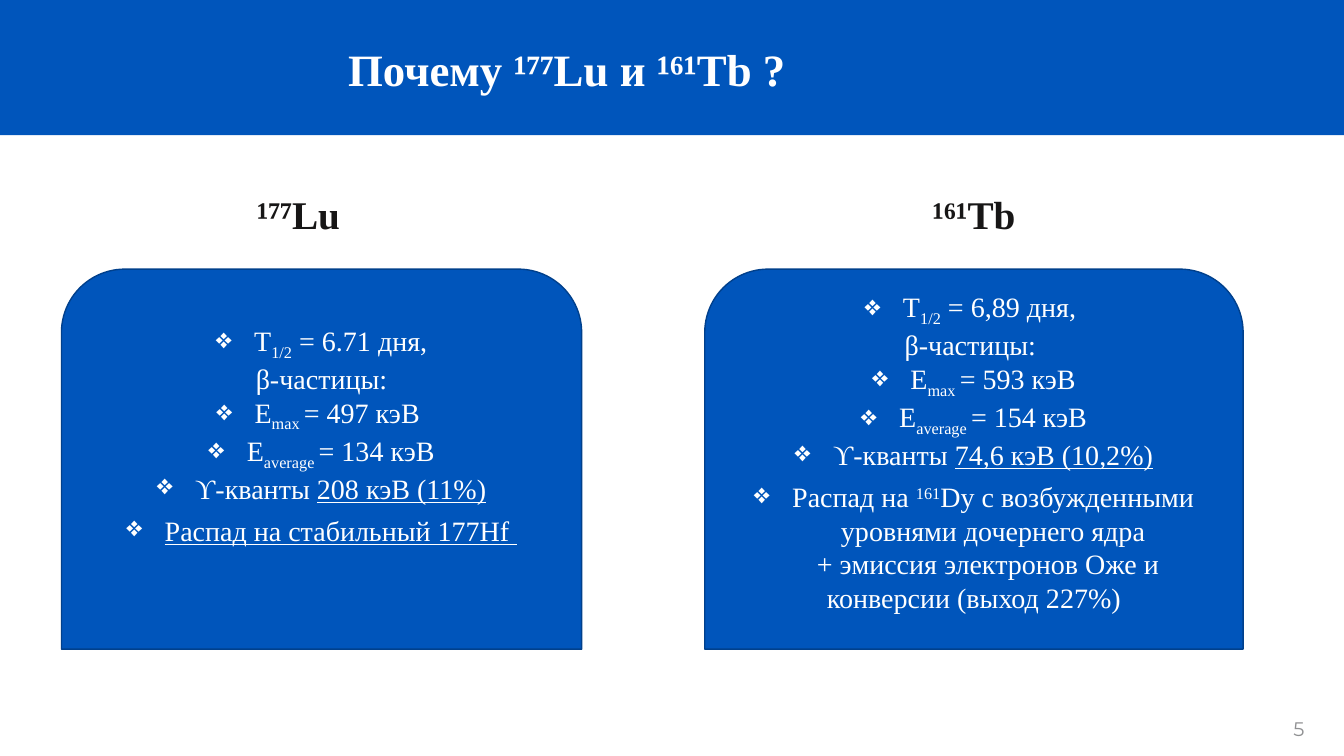
import pptx
import pptx.dml.color
import pptx.enum.shapes
import pptx.enum.text
import pptx.oxml
import pptx.oxml.ns
import pptx.util
from pptx.util import Inches

COLORS = {"blue": "0055BB", "edge": "00408C", "white": "FFFFFF", "ink": "171616", "gray": "8F9092"}
SERIF = "Times New Roman"
BASELINES = {"sub": "-25000", "sup": "30000"}
BULLET_INDENT = 0.38
BLANK_LINE = 0.33

LUTETIUM = [
    ("bullet", [("T", ""), ("1/2", "sub"), (" = 6.71 дня,", "")]),
    ("plain", [("β-частицы:", "")]),
    ("bullet", [("E", ""), ("maх ", "sub"), ("= 497 кэВ ", "")]),
    ("bullet", [("E", ""), ("average ", "sub"), ("= 134 кэВ", "")]),
    ("spaced", [("ϒ-кванты ", ""), ("208 кэВ (11%)", "line")]),
    ("bullet", [("Распад на стабильный 177Hf ", "line")]),
]
TERBIUM = [
    ("bullet", [("T", ""), ("1/2", "sub"), (" = 6,89 дня, ", "")]),
    ("plain", [("β-частицы: ", "")]),
    ("bullet", [("E", ""), ("max ", "sub"), ("= 593 кэВ", "")]),
    ("bullet", [("E", ""), ("average ", "sub"), ("= 154 кэВ", "")]),
    ("spaced", [("ϒ-кванты ", ""), ("74,6 кэВ (10,2%)", "line")]),
    ("bullet", [("Распад на ", ""), ("161", "sup"),
                ("Dy c возбужденными уровнями дочернего ядра", "")]),
    ("indented", [("+ эмиссия электронов Оже и конверсии (выход 227%)", "")]),
]


def rgb(name):
    return pptx.dml.color.RGBColor.from_string(COLORS[name])


def style_span(span, size, color, bold=False, font=SERIF):
    span.font.size = pptx.util.Pt(size)
    span.font.name = font
    span.font.bold = bold
    span.font.color.rgb = rgb(color)


def add_block(page, kind, place, line=None):
    block = page.shapes.add_shape(kind, *map(Inches, place))
    block.shadow.inherit = False
    block.fill.solid()
    block.fill.fore_color.rgb = rgb("blue")
    if line:
        block.line.color.rgb = rgb(line)
        block.line.width = pptx.util.Pt(1)
    else:
        block.line.fill.background()
    return block


def fill_label(box, text, size, color, bold=True, font=SERIF, wrap=True):
    frame = box.text_frame
    frame.text = text
    frame.word_wrap = wrap
    para = frame.paragraphs[0]
    if wrap:
        para.alignment = pptx.enum.text.PP_ALIGN.CENTER
    style_span(para.runs[0], size, color, bold, font)


def add_label(page, place, *args, **options):
    fill_label(page.shapes.add_textbox(*map(Inches, place)), *args, **options)


def set_title(page, text):
    title = page.shapes.title
    title.left, title.top, title.width, title.height = map(Inches, (0.61, 0.36, 10.03, 0.64))
    title.text_frame.vertical_anchor = pptx.enum.text.MSO_ANCHOR.MIDDLE
    fill_label(title, text, 32, "white")


def indent_para(para, kind):
    properties = para._p.get_or_add_pPr()
    if kind == "indented":
        properties.set("indent", str(Inches(0.28)))
    elif kind != "plain":
        properties.set("marL", str(Inches(BULLET_INDENT)))
        properties.set("indent", str(Inches(-BULLET_INDENT)))
        bullet = pptx.oxml.parse_xml(f'<a:buChar {pptx.oxml.ns.nsdecls("a")} char="❖"/>')
        properties.append(bullet)


def add_facts(page, left, width, facts, lines_below):
    kind = pptx.enum.shapes.MSO_SHAPE.ROUND_2_SAME_RECTANGLE
    card = add_block(page, kind, (left, 2.67, width, 3.77), "edge")
    frame = card.text_frame
    frame.word_wrap = True
    frame.vertical_anchor = pptx.enum.text.MSO_ANCHOR.MIDDLE
    frame.margin_bottom = Inches(0.05 + BLANK_LINE * lines_below)
    for index, (layout, pieces) in enumerate(facts):
        para = frame.add_paragraph() if index else frame.paragraphs[0]
        indent_para(para, layout)
        para.alignment = pptx.enum.text.PP_ALIGN.CENTER
        if layout == "spaced":
            para.space_after = pptx.util.Pt(6)
        for text, effect in pieces:
            span = para.add_run()
            span.text = text
            style_span(span, 20, "white")
            if effect == "line":
                span.font.underline = True
            elif effect:
                span._r.get_or_add_rPr().set("baseline", BASELINES[effect])


def main():
    deck = pptx.Presentation()
    deck.slide_width, deck.slide_height = Inches(13.33), Inches(7.5)
    page = deck.slides.add_slide(deck.slide_layouts[5])

    band = add_block(page, pptx.enum.shapes.MSO_SHAPE.RECTANGLE, (0, 0, 13.33, 1.34))
    page.shapes.title.element.addprevious(band.element)
    set_title(page, "Почему ¹⁷⁷Lu и ¹⁶¹Tb ?")

    add_facts(page, 0.61, 5.16, LUTETIUM, 2)
    add_facts(page, 6.99, 5.34, TERBIUM, 1)
    for left, isotope in ((0.74, "¹⁷⁷Lu"), (7.44, "¹⁶¹Tb")):
        add_label(page, (left, 1.84, 4.44, 0.57), isotope, 28, "ink")
    add_label(page, (12.73, 7.06, 0.45, 0.34), "5", 14, "gray",
              bold=False, font="Montserrat", wrap=False)
    deck.save("out.pptx")


if __name__ == "__main__":
    main()
